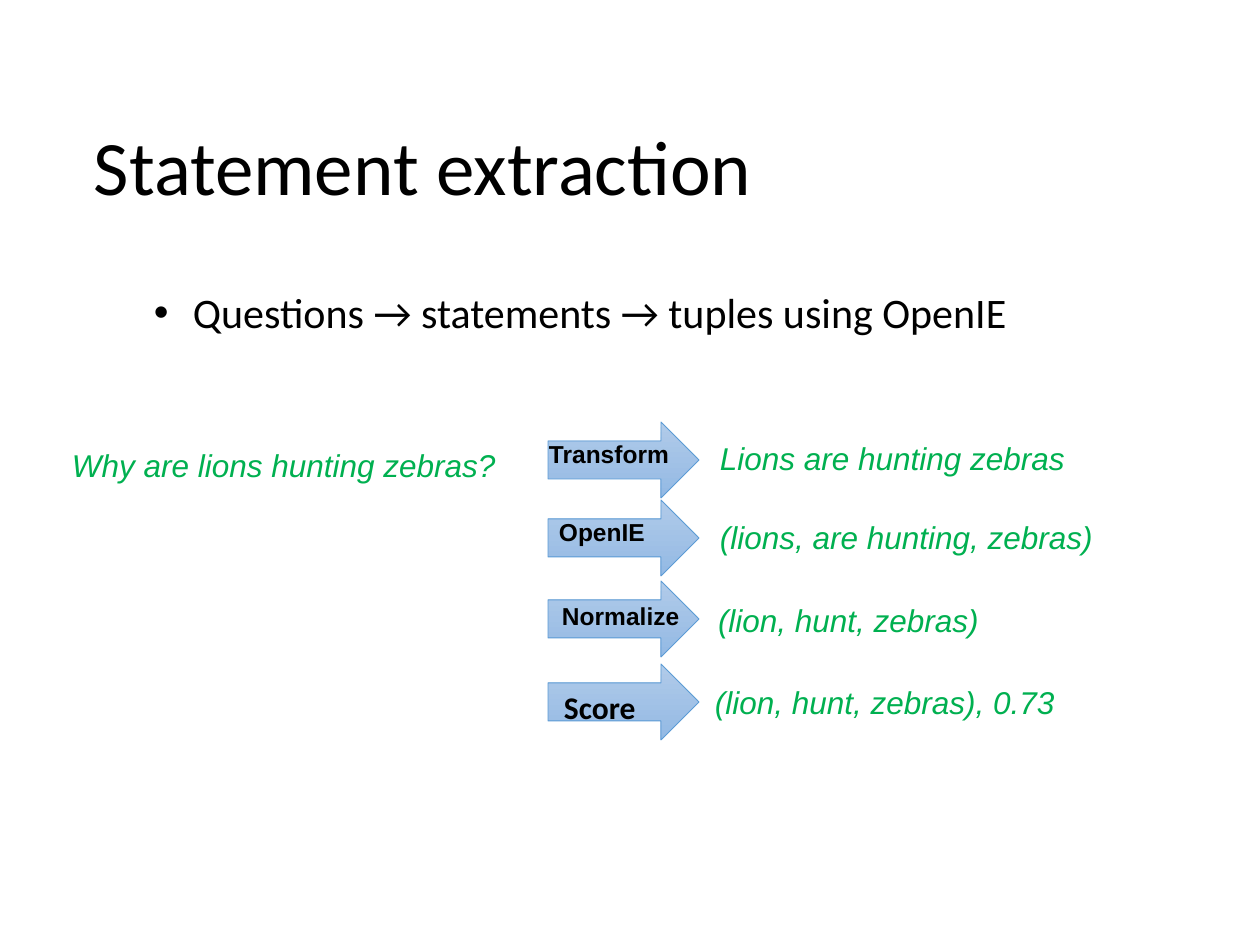
from pptx import Presentation
from pptx.dml.color import RGBColor
from pptx.enum.shapes import MSO_SHAPE
from pptx.enum.text import MSO_ANCHOR, PP_ALIGN
from pptx.oxml.ns import qn
from pptx.util import Pt
from lxml import etree

PX = 914400 // 126

BLACK = RGBColor(0x00, 0x00, 0x00)
GREEN = RGBColor(0x00, 0xB0, 0x50)
ARROW_TOP = RGBColor(0xB1, 0xCB, 0xE9)
ARROW_BOTTOM = RGBColor(0x93, 0xB9, 0xE4)
ARROW_LINE = RGBColor(0x5B, 0x9B, 0xD5)


def write(frame, text, *, size, font="Arial", color=BLACK, bold=False,
          italic=False, before=1):
    """Put one formatted line into a text frame and return its paragraph."""
    para = frame.paragraphs[0]
    para.alignment = PP_ALIGN.LEFT
    para.space_before = Pt(before)
    span = para.add_run()
    span.text = text
    span.font.size = Pt(size)
    span.font.name = font
    span.font.color.rgb = color
    span.font.bold = bold
    span.font.italic = italic
    return para


def set_insets(frame, left, top):
    frame.margin_left, frame.margin_top = left * PX, top * PX
    frame.margin_right = frame.margin_bottom = 0


class SlideBuilder:
    """Holds the current slide and the look of its elements."""

    label_style = dict(size=14, bold=True)
    example_style = dict(size=18, color=GREEN, italic=True)

    def __init__(self, page):
        self.page = page

    def text(self, text, left, top, width, height,
             anchor=MSO_ANCHOR.TOP, **style):
        box = self.page.shapes.add_textbox(
            left * PX, top * PX, width * PX, height * PX)
        frame = box.text_frame
        frame.word_wrap = True
        frame.vertical_anchor = anchor
        set_insets(frame, 1, 1)
        return write(frame, text, **style)

    def bullet(self, text, left, top, width, height, **style):
        para = self.text(text, left, top, width, height, **style)
        properties = para._p.get_or_add_pPr()
        properties.set("marL", str(41 * PX))
        properties.set("indent", str(-39 * PX))
        etree.SubElement(properties, qn("a:buFont"), typeface="Arial")
        etree.SubElement(properties, qn("a:buChar"), char="•")

    def label(self, text, left, top, width):
        self.text(text, left, top, width, 32, **self.label_style)

    def example(self, text, left, top, width):
        self.text(text, left, top, width, 40, **self.example_style)

    def arrow(self, left, top, width=151, height=76):
        shape = self.page.shapes.add_shape(
            MSO_SHAPE.RIGHT_ARROW, left * PX, top * PX, width * PX, height * PX)
        shape.shadow.inherit = False
        shape.fill.gradient()
        shape.fill.gradient_angle = 270
        first, last = shape.fill.gradient_stops
        first.color.rgb, last.color.rgb = ARROW_TOP, ARROW_BOTTOM
        shape.line.color.rgb = ARROW_LINE
        shape.line.width = Pt(0.5)
        return shape


def main():
    deck = Presentation()
    deck.slide_width, deck.slide_height = 1260 * PX, 945 * PX
    page = deck.slides.add_slide(deck.slide_layouts[6])
    builder = SlideBuilder(page)

    # Title and topic
    builder.text("Statement extraction", 93, 117, 985, 95,
                 anchor=MSO_ANCHOR.MIDDLE, size=44, font="Calibri")
    builder.bullet("Questions → statements → tuples using OpenIE",
                   151, 286, 882, 53, size=24, font="Calibri")

    # Question that enters the pipeline
    builder.example("Why are lions hunting zebras?", 71, 445, 432)

    # Steps: arrow top, label with its place, result with its place
    steps = [
        (422, ("Transform", 548, 438, 126),
         ("Lions are hunting zebras", 719, 438, 389)),
        (500, ("OpenIE", 558, 516, 90),
         ("(lions, are hunting, zebras)", 719, 517, 418)),
        (581, ("Normalize", 561, 600, 146),
         ("(lion, hunt, zebras)", 717, 600, 294)),
        (664, None, ("(lion, hunt, zebras), 0.73", 714, 682, 368)),
    ]
    for top, label, result in steps:
        arrow = builder.arrow(548, top)
        if label:
            builder.label(*label)
        builder.example(*result)

    # The last arrow carries its own text
    frame = arrow.text_frame
    frame.word_wrap = True
    frame.vertical_anchor = MSO_ANCHOR.TOP
    set_insets(frame, 16, 5)
    write(frame, "Score", size=18, font="Calibri", bold=True, before=0)

    deck.save("out.pptx")


if __name__ == "__main__":
    main()
